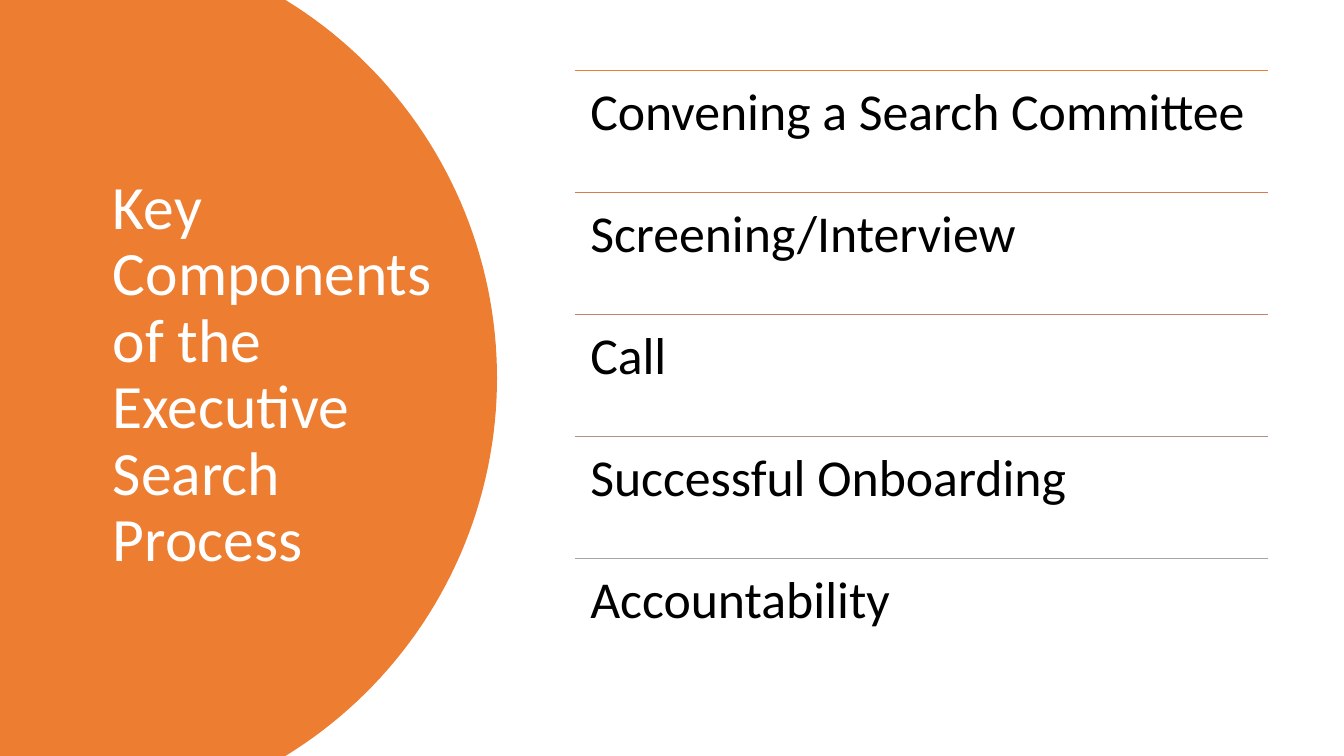
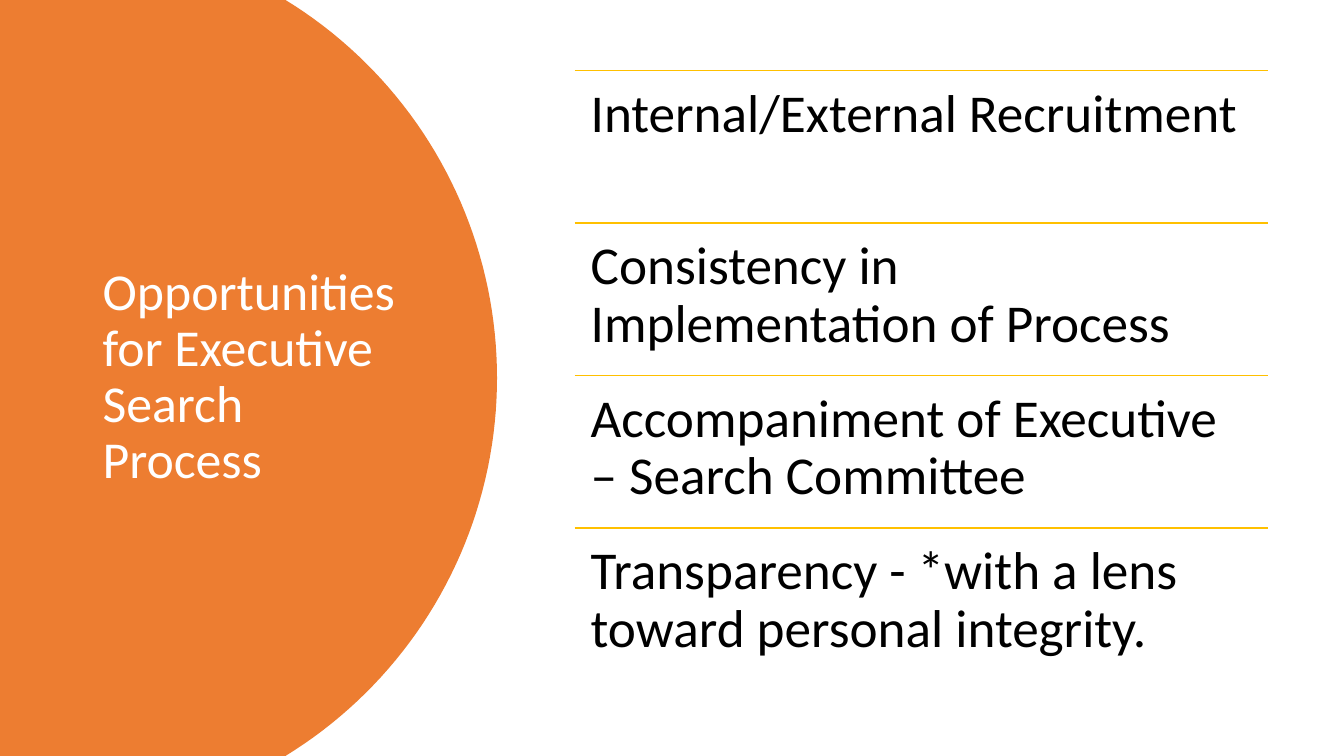
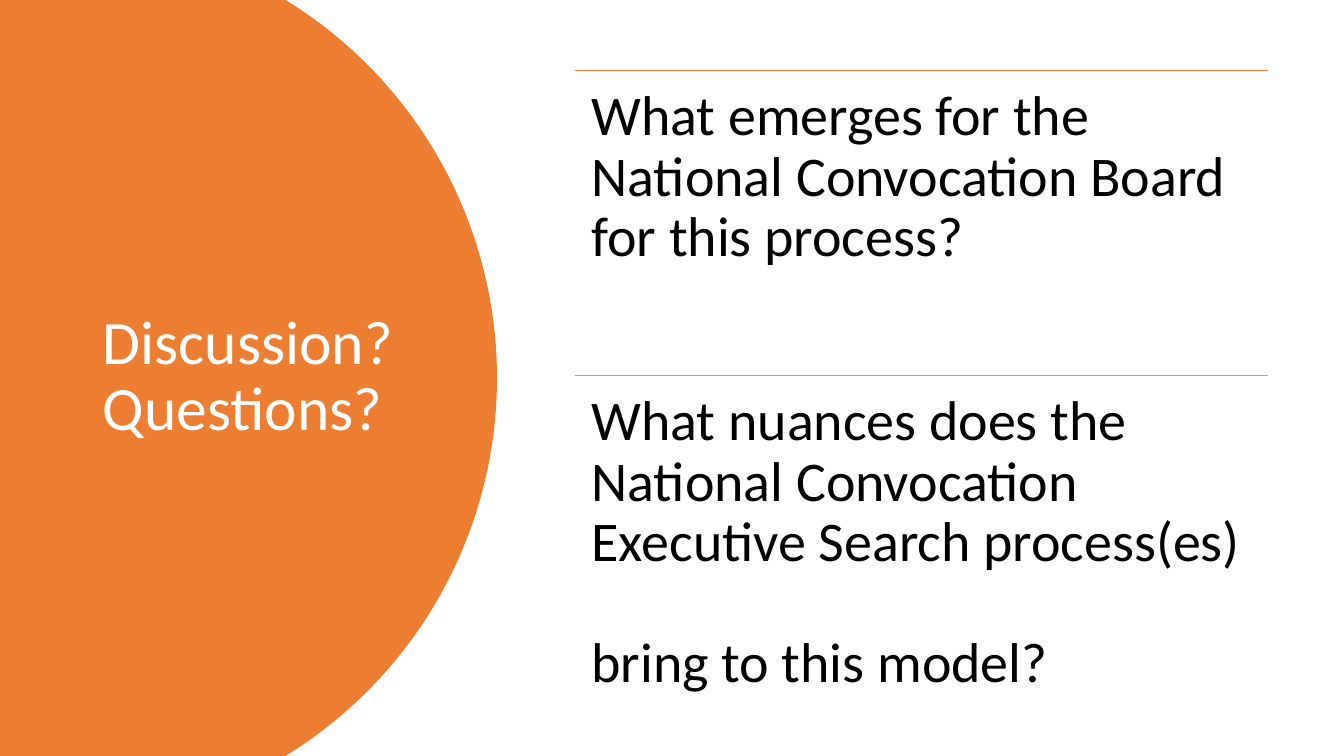
from dataclasses import dataclass
from math import asin, cos, sin

from pptx import Presentation
from pptx.dml.color import RGBColor
from pptx.enum.shapes import MSO_CONNECTOR
from pptx.enum.text import MSO_ANCHOR
from pptx.oxml.ns import qn
from pptx.util import Inches, Pt
from lxml.etree import SubElement


@dataclass(frozen=True)
class Theme:
    font: str = "Calibri"
    band: str = "ED7D31"
    gold: str = "FFC000"
    gray: str = "A5A5A5"
    text: str = "000000"
    title: str = "FFFFFF"
    large: int = 44
    small: int = 37
    lead: float = 0.9
    rule: float = 1


THEME = Theme()
WIDE, HIGH = 13.33, 7.5
LEFT, RIGHT, TOP, BASE = 5.7, 12.58, 0.7, 6.75
EDGE, RADIUS, STEPS = 4.93, 4.4, 80

SLIDES = [
    {
        "title": "Key Components of the Executive Search Process",
        "box": (1.02, 0.68, 3.52, 6.09),
        "head": THEME.large,
        "size": 37,
        "rows": [
            ("Convening a Search Committee", THEME.band),
            ("Screening/Interview", "D87A51"),
            ("Call", "C48170"),
            ("Successful Onboarding", "B4908B"),
            ("Accountability", THEME.gray),
        ],
    },
    {
        "title": "Opportunities for Executive Search Process",
        "box": (0.92, 0.7, 3.23, 6.09),
        "head": THEME.small,
        "size": 38,
        "rows": [
            ("Internal/External Recruitment", THEME.gold),
            ("Consistency in Implementation of Process", THEME.gold),
            ("Accompaniment of Executive – Search Committee", THEME.gold),
            ("Transparency - *with a lens toward personal integrity.", THEME.gold),
        ],
    },
    {
        "title": "Discussion?\vQuestions?",
        "box": (0.92, 0.7, 3.23, 6.09),
        "head": THEME.large,
        "size": 40,
        "rows": [
            ("What emerges for the National Convocation Board for this process?",
             THEME.band),
            ("What nuances does the National Convocation Executive Search "
             "process(es) \vbring to this model?", THEME.gray),
        ],
    },
]


def add_band(shapes):
    mid = HIGH / 2
    sweep = asin(mid / RADIUS)
    turns = [sweep * (2 * i / STEPS - 1) for i in range(STEPS + 1)]
    arc = [(EDGE - RADIUS + RADIUS * cos(t), mid + RADIUS * sin(t)) for t in turns]
    pen = shapes.build_freeform(0, 0, scale=1)
    pen.add_line_segments(
        [(Inches(x), Inches(y)) for x, y in arc + [(0, HIGH)]], close=True)
    band = pen.convert_to_shape()
    band.shadow.inherit = False
    band.fill.solid()
    band.fill.fore_color.rgb = RGBColor.from_string(THEME.band)
    band.line.fill.background()


def add_text(shapes, words, box, size, color, pad=None, anchor=MSO_ANCHOR.TOP):
    frame = shapes.add_textbox(*map(Inches, box)).text_frame
    frame.word_wrap = True
    frame.vertical_anchor = anchor
    if pad is not None:
        frame.margin_left = frame.margin_right = Inches(pad)
        frame.margin_top = frame.margin_bottom = Inches(pad)
    para = frame.paragraphs[0]
    para.text = words
    para.line_spacing = THEME.lead
    para.font.name = THEME.font
    para.font.size = Pt(size)
    para.font.color.rgb = RGBColor.from_string(color)


def add_rule(shapes, y, color):
    rule = shapes.add_connector(
        MSO_CONNECTOR.STRAIGHT, Inches(LEFT), Inches(y), Inches(RIGHT), Inches(y))
    rule.line.color.rgb = RGBColor.from_string(color)
    rule.line.width = Pt(THEME.rule)
    SubElement(rule._element.spPr, qn("a:effectLst"))


def add_rows(shapes, rows, size):
    group = shapes.add_group_shape().shapes
    step = (BASE - TOP) / len(rows)
    for i, (words, color) in enumerate(rows):
        y = TOP + i * step
        add_rule(group, y, color)
        add_text(group, words, (LEFT, y, RIGHT - LEFT, step), size,
                 THEME.text, pad=size / 240)


def main():
    deck = Presentation()
    deck.slide_width, deck.slide_height = Inches(WIDE), Inches(HIGH)
    for page in SLIDES:
        shapes = deck.slides.add_slide(deck.slide_layouts[6]).shapes
        add_band(shapes)
        add_text(shapes, page["title"], page["box"], page["head"],
                 THEME.title, anchor=MSO_ANCHOR.MIDDLE)
        add_rows(shapes, page["rows"], page["size"])
    deck.save("out.pptx")


if __name__ == "__main__":
    main()
